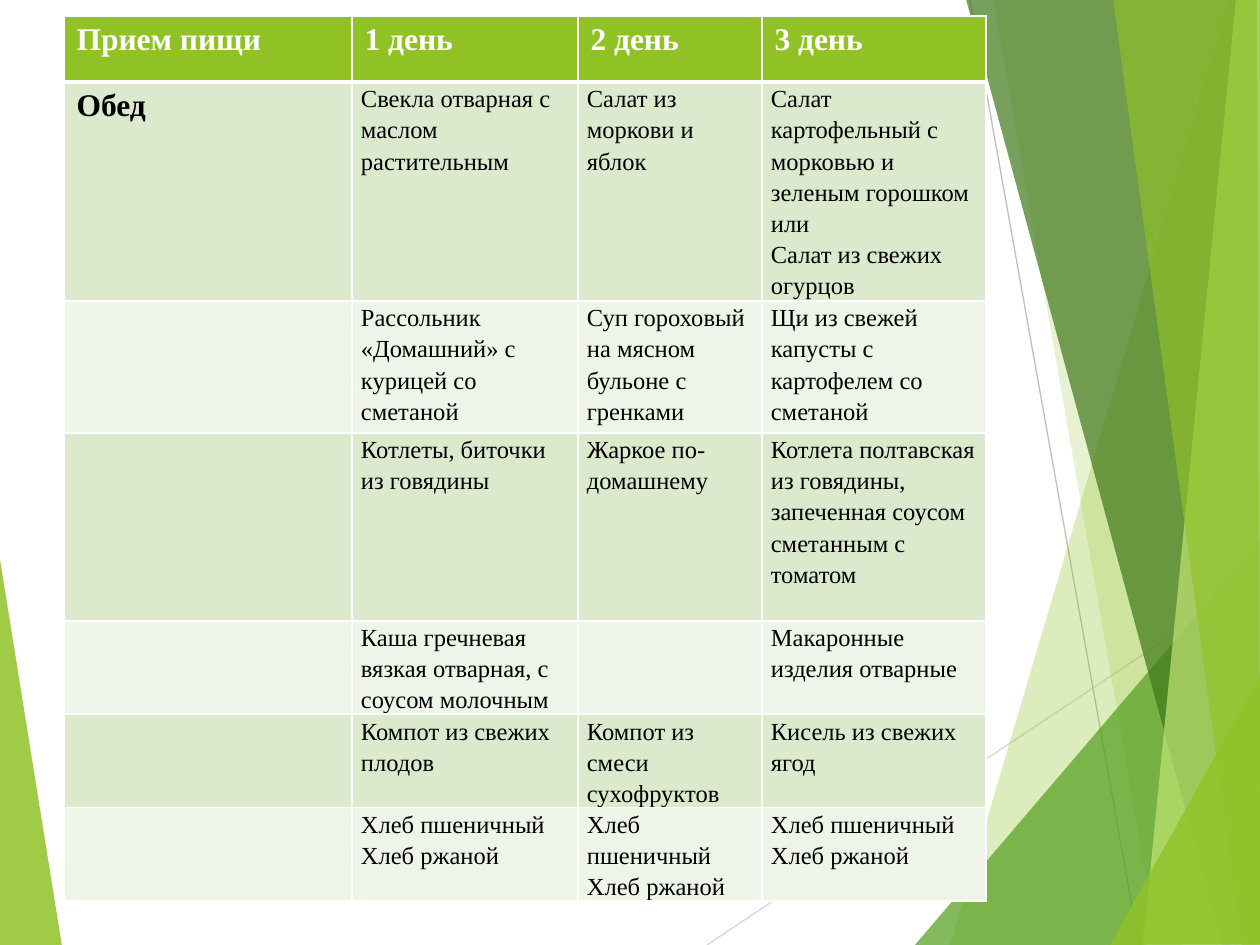
"""Build a slide with a three-day lunch menu table over green facets."""
from lxml.etree import SubElement
from pptx import Presentation
from pptx.dml.color import RGBColor as Rgb
from pptx.enum.shapes import MSO_CONNECTOR as Connector
from pptx.oxml.ns import qn
from pptx.util import Emu, Pt

SCALE = 914400 / 126
THEME = {
    "font": "Times New Roman", "head_size": 18, "body_size": 14,
    "lime": "90C226", "green": "54A021", "dark": "3F7819", "pale": "C0E474",
    "band": "DBE9CD", "light": "EEF4E8", "white": "FFFFFF", "black": "000000",
    "rule_a": "D9D9D9", "rule_b": "BFBFBF",
}


def px(length):
    return Emu(round(length * SCALE))


def add_color(parent, color, alpha=100):
    fill = SubElement(parent, qn("a:solidFill"))
    value = SubElement(fill, qn("a:srgbClr"), val=THEME[color])
    if alpha < 100:
        SubElement(value, qn("a:alpha"), val=str(alpha * 1000))


deck = Presentation()
deck.slide_width, deck.slide_height = px(1260), px(945)
page = deck.slides.add_slide(deck.slide_layouts[6])

rules = [((707, 945, 1261, 576), "rule_a"), ((970, 0, 1139, 945), "rule_b")]
for ends, color in rules:
    rule = page.shapes.add_connector(Connector.STRAIGHT, *map(px, ends))
    rule.line.color.rgb = Rgb.from_string(THEME[color])
    rule.line.width = Pt(0.75)
    SubElement(rule._element.spPr, qn("a:effectLst"))

facets = [
    ("lime", 85, [(-1, 553), (62, 946), (-1, 945)]),
    ("lime", 30, [(1229, 0), (950, 945), (1262, 946), (1261, 1)]),
    ("lime", 20, [(993, -1), (1158, 945), (1261, 945), (1261, -1)]),
    ("green", 72, [(915, 945), (1260, 541), (1261, 945)]),
    ("dark", 70, [(966, -1), (1222, 945), (1261, 944), (1261, -1)]),
    ("pale", 70, [(1236, -1), (1143, 945), (1261, 945), (1260, -1)]),
    ("lime", 65, [(1113, -1), (1242, 945), (1260, 945), (1257, -1)]),
    ("lime", 80, [(1110, 945), (1261, 674), (1261, 944)]),
]
for color, alpha, points in facets:
    outline = page.shapes.build_freeform(*points[0], scale=SCALE)
    outline.add_line_segments(points[1:], close=True)
    facet = outline.convert_to_shape()
    facet.shadow.inherit = False
    facet.line.fill.background()
    facet.fill.solid()
    facet.fill.fore_color.rgb = Rgb.from_string(THEME[color])
    value = facet._element.spPr.find(qn("a:solidFill"))[0]
    SubElement(value, qn("a:alpha"), val=str(alpha * 1000))

bread = "Хлеб пшеничный\nХлеб ржаной"
menu = [
    ["Прием пищи", "1 день", "2 день", "3 день"],
    ["Обед", "Свекла отварная с маслом растительным", "Салат из моркови и яблок",
     "Салат картофельный с морковью и зеленым горошком или\nСалат из свежих огурцов"],
    ["", "Рассольник «Домашний» с курицей со сметаной",
     "Суп гороховый на мясном бульоне с гренками",
     "Щи из свежей капусты с картофелем со сметаной"],
    ["", "Котлеты, биточки из говядины", "Жаркое по-домашнему",
     "Котлета полтавская из говядины, запеченная соусом сметанным с томатом"],
    ["", "Каша гречневая вязкая отварная, с соусом молочным", "",
     "Макаронные изделия отварные"],
    ["", "Компот из свежих плодов", "Компот из смеси сухофруктов",
     "Кисель из свежих ягод"],
    ["", bread, bread, bread],
]
widths = [288, 226, 184, 224]
heights = [66, 219, 132, 188, 93, 93, 93]
frame = page.shapes.add_table(len(heights), len(widths), px(64), px(16),
                              px(sum(widths)), px(sum(heights)))
table = frame.table
for column, width in zip(table.columns, widths):
    column.width = px(width)
for row, height in zip(table.rows, heights):
    row.height = px(height)

for row_no, dishes in enumerate(menu):
    for column_no, dish in enumerate(dishes):
        cell = table.cell(row_no, column_no)
        header = row_no == 0
        heading = header or column_no == 0
        properties = cell._tc.get_or_add_tcPr()
        for side in "LRTB":
            thick = (header and side == "B") or (row_no == 1 and side == "T")
            border = SubElement(properties, qn(f"a:ln{side}"), w=str(Pt(3 if thick else 1)))
            add_color(border, "white")
        fill = "lime" if header else "band" if row_no % 2 else "light"
        cell.fill.solid()
        cell.fill.fore_color.rgb = Rgb.from_string(THEME[fill])
        if not dish:
            continue
        if not heading:
            cell.margin_left = cell.margin_right = px(9)
            cell.margin_top = cell.margin_bottom = 0
        for line_no, line in enumerate(dish.split("\n")):
            text = cell.text_frame
            para = text.add_paragraph() if line_no else text.paragraphs[0]
            if not heading:
                para.line_spacing = 1.15
            span = para.add_run()
            span.text = line
            span.font.name = THEME["font"]
            span.font.size = Pt(THEME["head_size" if heading else "body_size"])
            span.font.bold = heading
            span.font.color.rgb = Rgb.from_string(THEME["white" if header else "black"])

deck.save("out.pptx")
